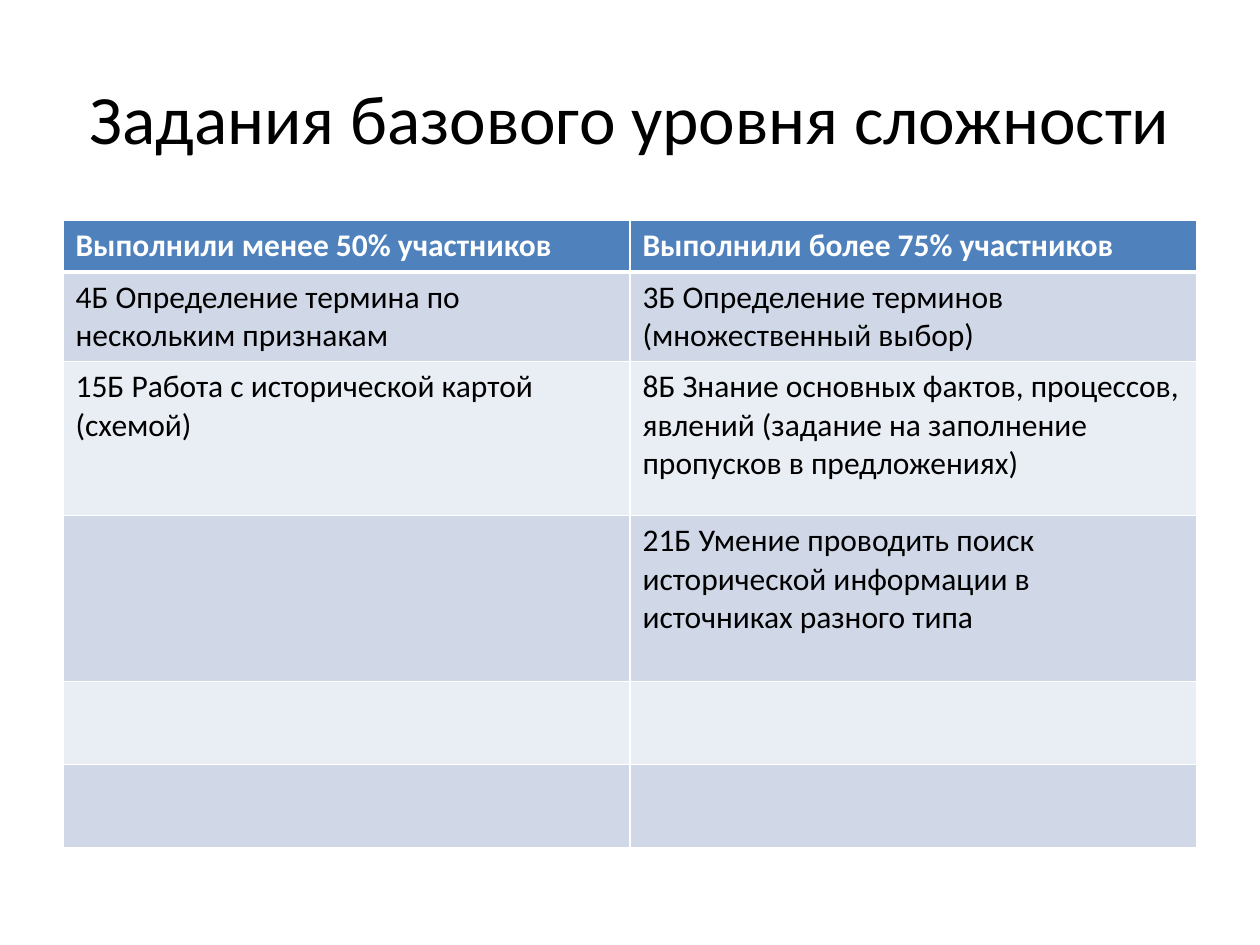
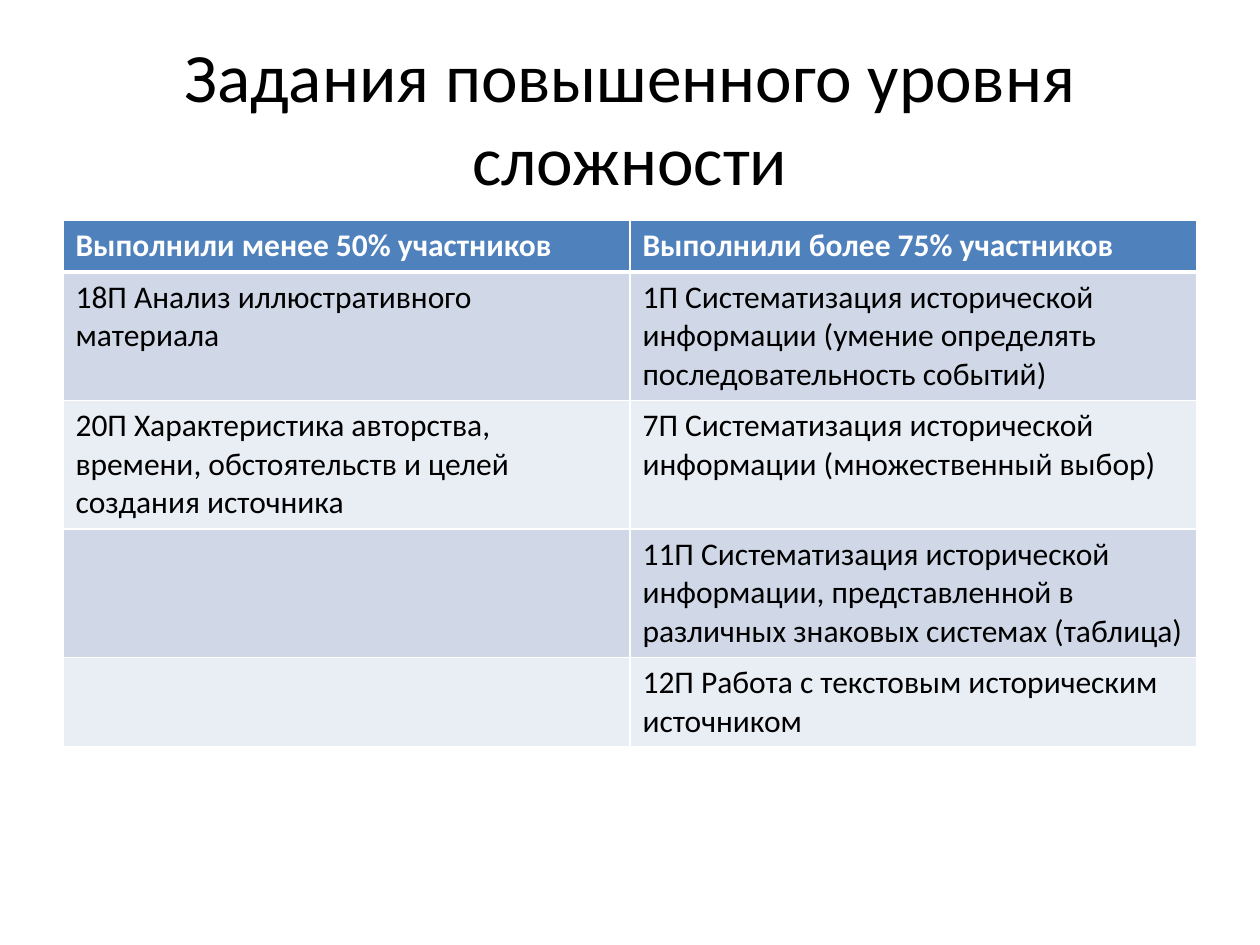
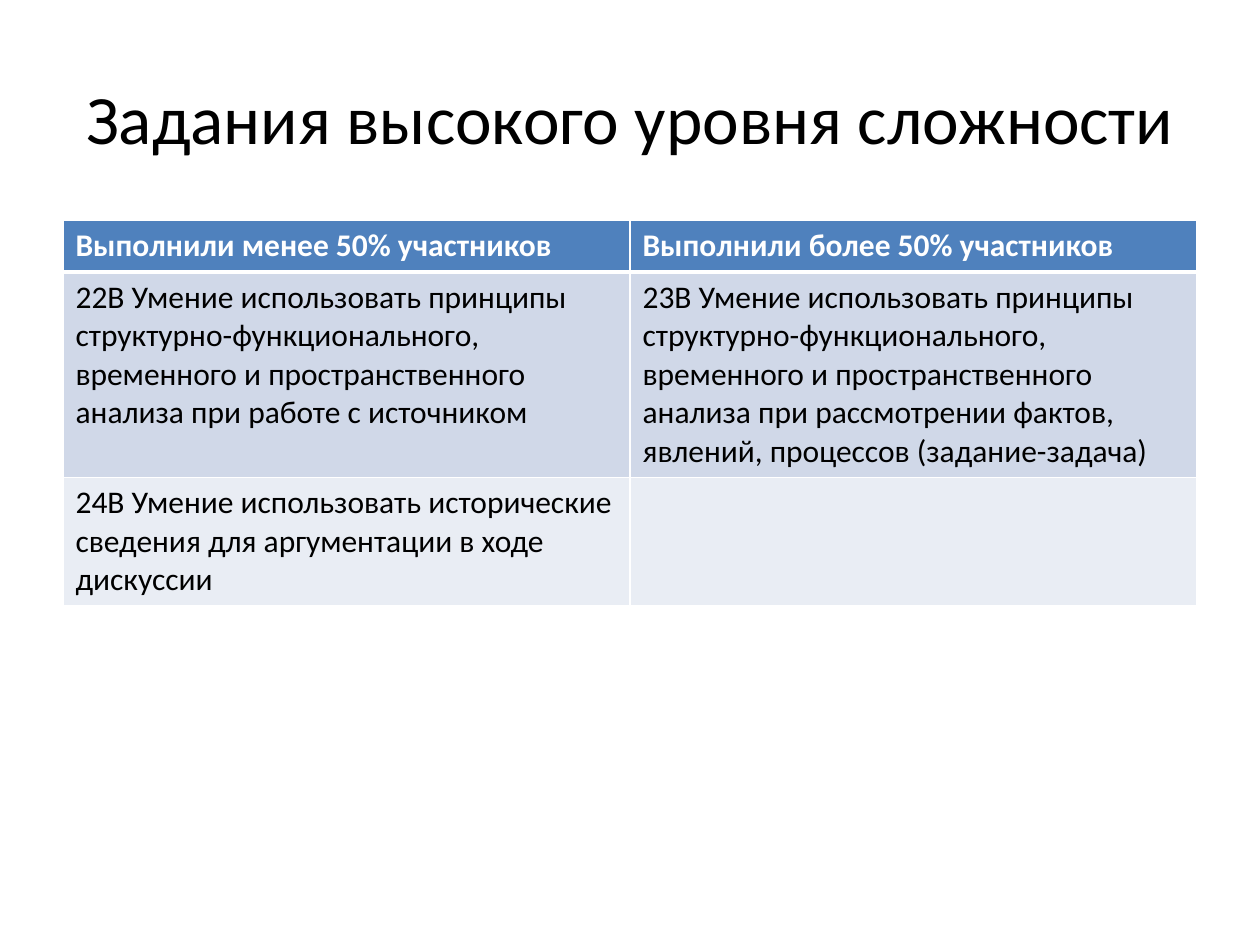
from lxml.etree import SubElement as Sub
from pptx import Presentation as Deck
from pptx.dml.color import RGBColor as Rgb
from pptx.enum.text import MSO_ANCHOR as Anchor, PP_ALIGN as Align
from pptx.oxml.ns import qn
from pptx.util import Inches, Pt

WIDE, HIGH = Inches(10), Inches(7.5)
EDGE, SPAN = 0.05, 0.9
WHITE, BLACK, HEAD = "FFFFFF", "000000", "4F81BD"
BANDS = ("E9EDF4", "D0D8E8")
TITLE = {"name": "Calibri", "size": Pt(39.6), "bold": False}
BODY = {"name": "Calibri", "size": Pt(18), "bold": False}
TOP = {**BODY, "bold": True}
LESS = "Выполнили менее 50% участников"
MORE = "Выполнили более {}% участников"

PAGES = [
    ("Задания базового уровня сложности", 75, [
        (0.71, "4Б Определение термина по нескольким признакам",
         "3Б Определение терминов (множественный выбор)"),
        (1.22, "15Б Работа с исторической картой (схемой)",
         "8Б Знание основных фактов, процессов, явлений "
         "(задание на заполнение пропусков в предложениях)"),
        (1.32, "", "21Б Умение проводить поиск исторической информации "
         "в источниках разного типа"),
        (0.66, "", ""),
        (0.66, "", ""),
    ]),
    ("Задания повышенного уровня сложности", 75, [
        (1.02, "18П Анализ иллюстративного материала",
         "1П Систематизация исторической информации "
         "(умение определять последовательность событий)"),
        (1.02, "20П Характеристика авторства, времени, обстоятельств "
         "и целей создания источника",
         "7П Систематизация исторической информации (множественный выбор)"),
        (1.02, "", "11П Систематизация исторической информации, "
         "представленной в различных знаковых системах (таблица)"),
        (0.71, "", "12П Работа с текстовым историческим источником"),
    ]),
    ("Задания высокого уровня сложности", 50, [
        (1.63, "22В Умение использовать принципы структурно-функционального, "
         "временного и пространственного анализа при работе с источником",
         "23В Умение использовать принципы структурно-функционального, "
         "временного и пространственного анализа при рассмотрении фактов, "
         "явлений, процессов (задание-задача)"),
        (1.02, "24В Умение использовать исторические сведения "
         "для аргументации в ходе дискуссии", ""),
    ]),
]


def paint(part, tint):
    """Give a fill or a font colour its hex tint."""
    part.rgb = Rgb.from_string(tint)


def write(frame, text, form, tint):
    """Put one formatted run into a text frame."""
    if not text:
        return
    run = frame.paragraphs[0].add_run()
    run.text = text
    for key, val in form.items():
        setattr(run.font, key, val)
    paint(run.font.color, tint)


def rule(cell, sides):
    """Draw white borders of the given widths round a cell."""
    props = cell._tc.get_or_add_tcPr()
    for side, width in sides.items():
        line = Sub(props, qn(f"a:ln{side}"), w=str(Pt(width)))
        Sub(Sub(line, qn("a:solidFill")), qn("a:srgbClr"), val=WHITE)


def title(slide, text):
    """Add the centred slide title."""
    box = slide.shapes.add_textbox(
        int(EDGE * WIDE), int(0.04 * HIGH), int(SPAN * WIDE), Inches(1.25))
    frame = box.text_frame
    for key, val in {"word_wrap": True, "vertical_anchor": Anchor.MIDDLE}.items():
        setattr(frame, key, val)
    frame.paragraphs[0].alignment = Align.CENTER
    write(frame, text, TITLE, BLACK)


def grid(slide, rows):
    """Add a two-column table with a header and banded rows."""
    tall = Inches(sum(row[0] for row in rows))
    table = slide.shapes.add_table(
        len(rows), 2, int(EDGE * WIDE), Inches(1.75), int(SPAN * WIDE), tall).table
    for n, (size, *texts) in enumerate(rows):
        table.rows[n].height = Inches(size)
        form, tint, fill = (BODY, BLACK, BANDS[n % 2]) if n else (TOP, WHITE, HEAD)
        sides = {"L": 1, "R": 1, "T": 3 if n == 1 else 1, "B": 1 if n else 3}
        for cell, text in zip(table.rows[n].cells, texts):
            rule(cell, sides)
            cell.fill.solid()
            paint(cell.fill.fore_color, fill)
            write(cell.text_frame, text, form, tint)


def main():
    """Build the deck and save it."""
    deck = Deck()
    deck.slide_width, deck.slide_height = WIDE, HIGH
    for name, share, rows in PAGES:
        slide = deck.slides.add_slide(deck.slide_layouts[6])
        title(slide, name)
        grid(slide, [(0.41, LESS, MORE.format(share)), *rows])
    deck.save("out.pptx")


if __name__ == "__main__":
    main()
